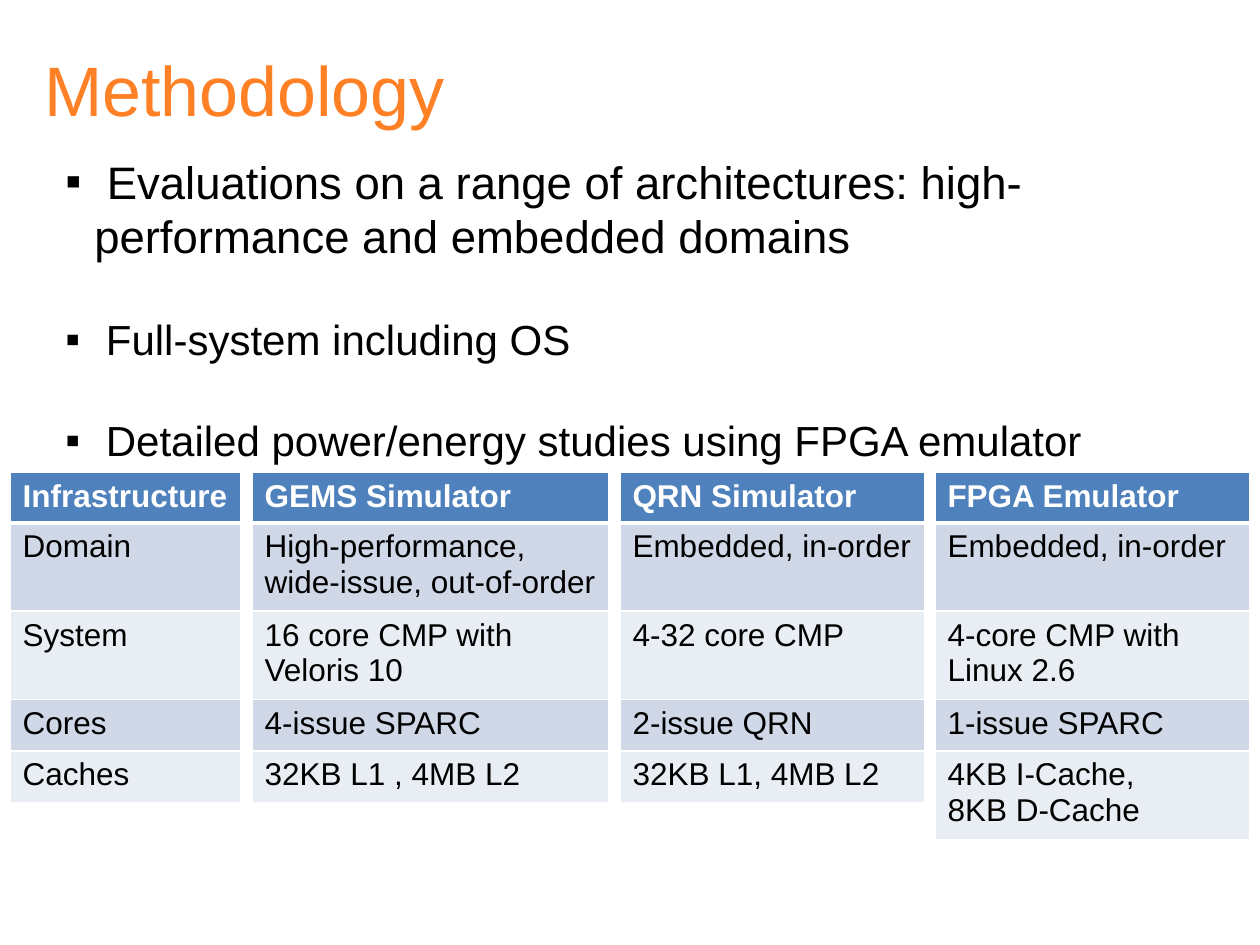
from dataclasses import dataclass

import pptx
import pptx.dml.color
import pptx.enum.text
import pptx.oxml
import pptx.oxml.ns
import pptx.util
from pptx.util import Inches


@dataclass(frozen=True)
class Theme:
    font: str = "Arial"
    title: str = "FF8025"
    ink: str = "000000"
    white: str = "FFFFFF"
    header: str = "4F81BD"
    bands: tuple[str, str] = ("D0D8E8", "E9EDF4")
    title_size: int = 40
    lead_size: int = 26
    bullet_size: int = 24
    table_size: int = 18


@dataclass(frozen=True)
class Platform:
    heading: str
    entries: tuple[str, ...]
    left: float
    width: float


THEME = Theme()
TABLE_TOP = 3.75
HEADER_HEIGHT = 0.4
LINE_HEIGHT = 0.41
DOUBLE_HEIGHT = 0.7
BULLET_INDENT = 0.23
BULLET_GAP = 29

POINTS = (
    (" Evaluations on a range of architectures: high-performance and embedded domains", THEME.lead_size),
    (" Full-system including OS", THEME.bullet_size),
    (" Detailed power/energy studies using FPGA emulator", THEME.bullet_size),
)

PLATFORMS = (
    Platform("Infrastructure", ("Domain", "System", "Cores", "Caches"), 0.08, 1.83),
    Platform(
        "GEMS Simulator",
        (
            "High-performance, wide-issue, out-of-order",
            "16 core CMP with Veloris 10",
            "4-issue SPARC",
            "32KB L1 , 4MB L2",
        ),
        2, 2.83,
    ),
    Platform(
        "QRN Simulator",
        ("Embedded, in-order", "4-32 core CMP", "2-issue QRN", "32KB L1, 4MB L2"),
        4.92, 2.42,
    ),
    Platform(
        "FPGA Emulator",
        (
            "Embedded, in-order",
            "4-core CMP with Linux 2.6",
            "1-issue SPARC",
            "4KB I-Cache,\n8KB D-Cache",
        ),
        7.42, 2.5,
    ),
)


def rgb(color: str) -> pptx.dml.color.RGBColor:
    return pptx.dml.color.RGBColor.from_string(color)


def write(paragraph, text: str, *, size: int, color: str = THEME.ink, bold: bool = False) -> None:
    paragraph.alignment = pptx.enum.text.PP_ALIGN.LEFT
    run = paragraph.add_run()
    run.text = text
    run.font.name = THEME.font
    run.font.size = pptx.util.Pt(size)
    run.font.bold = bold
    run.font.color.rgb = rgb(color)


def next_paragraph(frame, index: int):
    return frame.add_paragraph() if index else frame.paragraphs[0]


def add_bullet(paragraph) -> None:
    properties = paragraph._p.get_or_add_pPr()
    properties.set("marL", str(Inches(BULLET_INDENT)))
    properties.set("indent", str(-Inches(BULLET_INDENT)))
    namespace = pptx.oxml.ns.nsdecls("a")
    for element in (f'buFont {namespace} typeface="{THEME.font}"', f'buChar {namespace} char="▪"'):
        properties.append(pptx.oxml.parse_xml(f"<a:{element}/>"))


def add_borders(cell, bottom_points: int) -> None:
    properties = cell._tc.get_or_add_tcPr()
    for position, side in enumerate("LRTB"):
        points = bottom_points if side == "B" else 1
        border = pptx.oxml.parse_xml(
            f'<a:ln{side} {pptx.oxml.ns.nsdecls("a")} w="{pptx.util.Pt(points)}">'
            f'<a:solidFill><a:srgbClr val="{THEME.white}"/></a:solidFill></a:ln{side}>'
        )
        properties.insert(position, border)


def add_title(slide) -> None:
    title = slide.shapes.title
    title.left, title.top = Inches(0.25), Inches(0.08)
    title.width, title.height = Inches(9.5), Inches(1.25)
    title.text_frame.vertical_anchor = pptx.enum.text.MSO_ANCHOR.MIDDLE
    write(title.text_frame.paragraphs[0], "Methodology", size=THEME.title_size, color=THEME.title)


def add_points(slide) -> None:
    frame = slide.shapes.add_textbox(Inches(0.42), Inches(1.17), Inches(9.33), Inches(2.66)).text_frame
    frame.word_wrap = True
    for index, (text, size) in enumerate(POINTS):
        paragraph = next_paragraph(frame, index)
        add_bullet(paragraph)
        paragraph.line_spacing = 1.0
        paragraph.space_before = pptx.util.Pt(BULLET_GAP if index else 0)
        write(paragraph, text, size=size)


def add_platform(slide, platform: Platform) -> None:
    caches_height = DOUBLE_HEIGHT if "\n" in platform.entries[-1] else LINE_HEIGHT
    heights = (HEADER_HEIGHT, DOUBLE_HEIGHT, DOUBLE_HEIGHT, LINE_HEIGHT, caches_height)
    table = slide.shapes.add_table(
        len(heights), 1, Inches(platform.left), Inches(TABLE_TOP),
        Inches(platform.width), Inches(sum(heights)),
    ).table
    table.horz_banding = False
    for row, (text, height) in enumerate(zip((platform.heading, *platform.entries), heights)):
        is_header = row == 0
        table.rows[row].height = Inches(height)
        cell = table.cell(row, 0)
        cell.fill.solid()
        cell.fill.fore_color.rgb = rgb(THEME.header if is_header else THEME.bands[(row - 1) % 2])
        add_borders(cell, 3 if is_header else 1)
        for index, line in enumerate(text.split("\n")):
            write(
                next_paragraph(cell.text_frame, index), line, size=THEME.table_size,
                color=THEME.white if is_header else THEME.ink, bold=is_header,
            )


def main() -> None:
    presentation = pptx.Presentation()
    presentation.slide_width, presentation.slide_height = Inches(10), Inches(7.5)
    slide = presentation.slides.add_slide(presentation.slide_layouts[5])
    add_title(slide)
    add_points(slide)
    for platform in PLATFORMS:
        add_platform(slide, platform)
    presentation.save("out.pptx")


if __name__ == "__main__":
    main()
